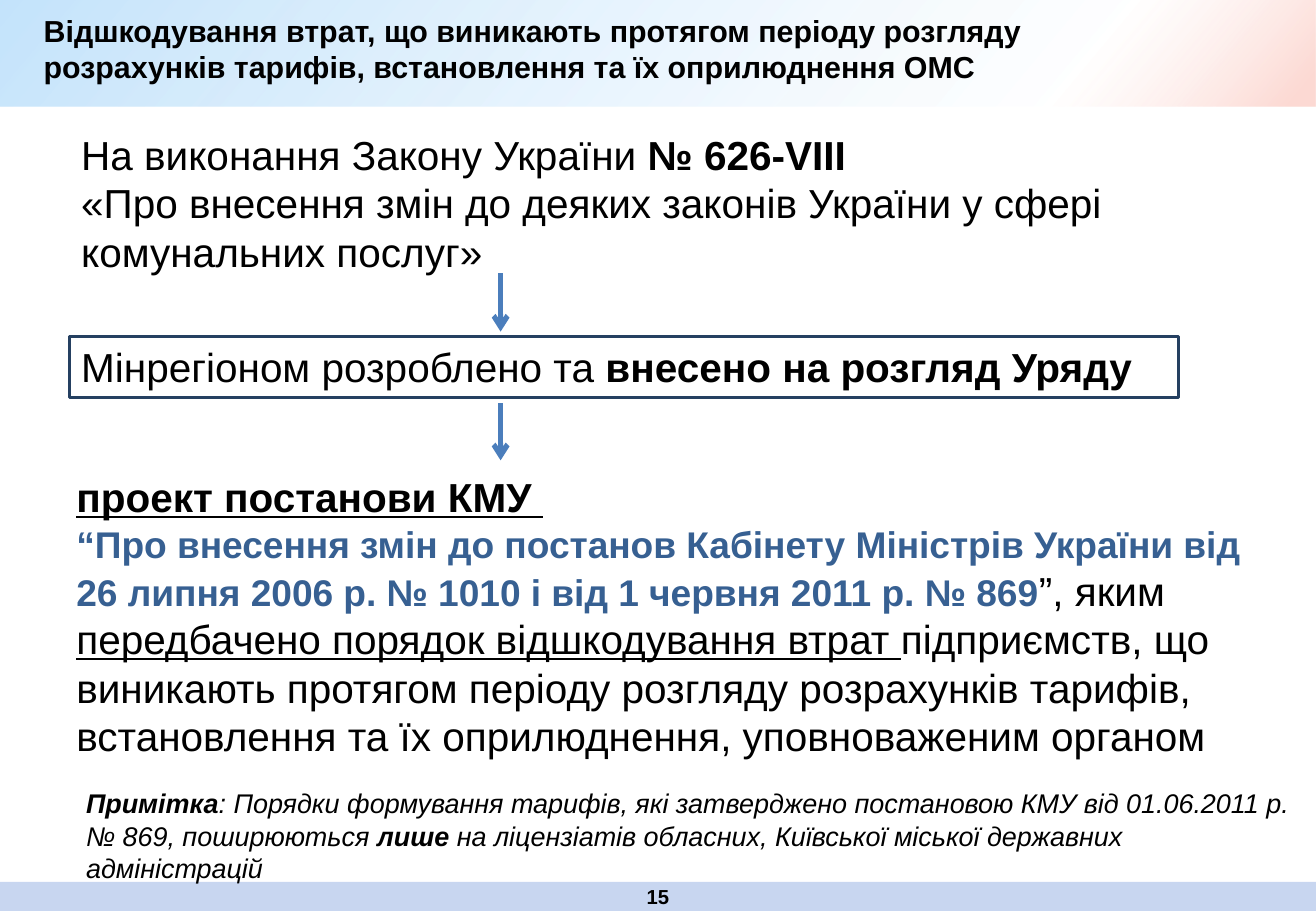
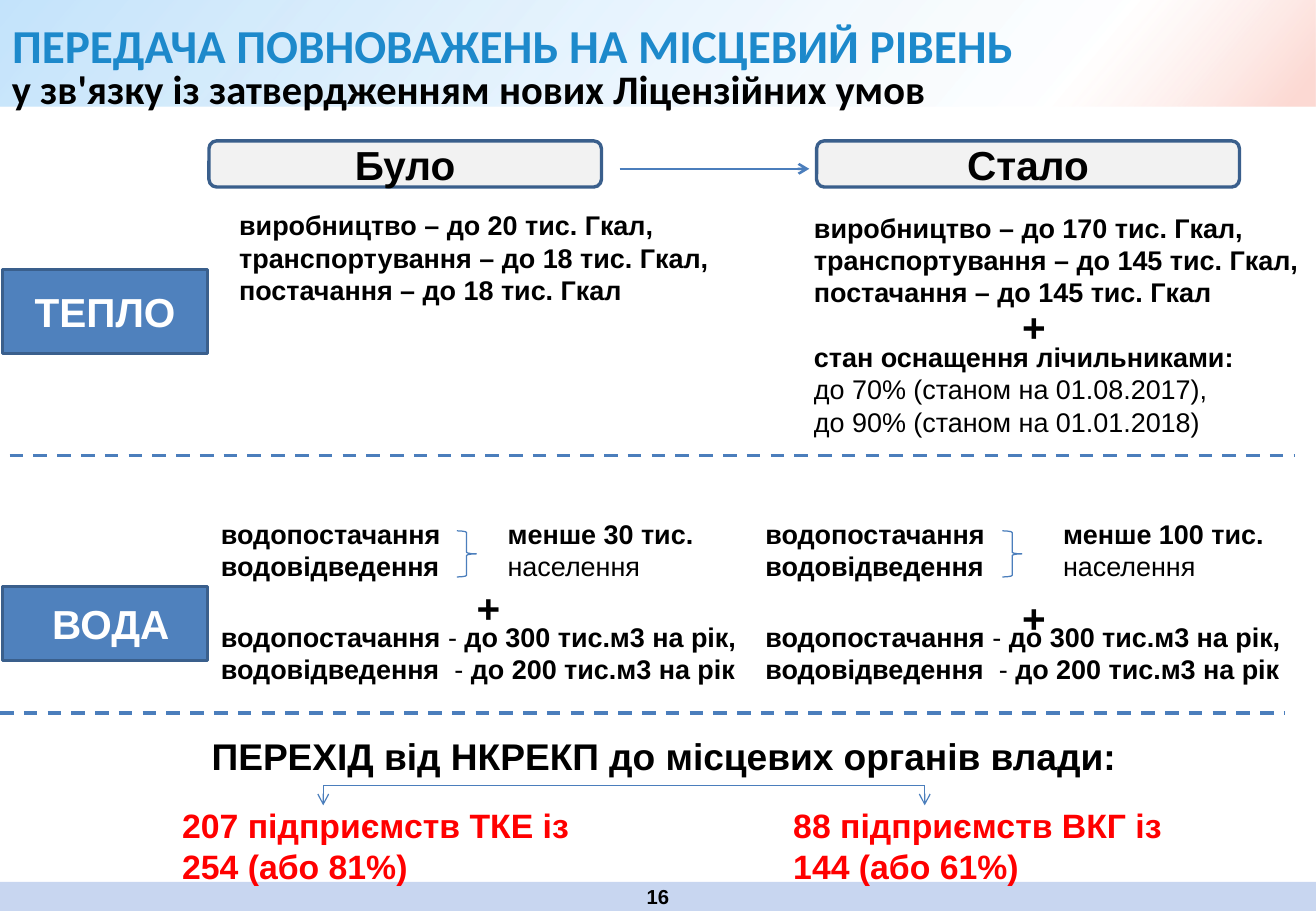
from lxml import etree
from pptx import Presentation
from pptx.dml.color import RGBColor
from pptx.enum.dml import MSO_LINE
from pptx.enum.shapes import MSO_CONNECTOR, MSO_SHAPE
from pptx.enum.text import MSO_ANCHOR, MSO_AUTO_SIZE, PP_ALIGN
from pptx.oxml import parse_xml
from pptx.oxml.ns import qn
from pptx.util import Inches, Pt

RECT, ROUND, BRACE = MSO_SHAPE.RECTANGLE, MSO_SHAPE.ROUNDED_RECTANGLE, MSO_SHAPE.RIGHT_BRACE
LEFT, CENTER, JUSTIFY = PP_ALIGN.LEFT, PP_ALIGN.CENTER, PP_ALIGN.JUSTIFY
TOP, MIDDLE = MSO_ANCHOR.TOP, MSO_ANCHOR.MIDDLE
NO_FIT, DASH, STRAIGHT = MSO_AUTO_SIZE.NONE, MSO_LINE.DASH, MSO_CONNECTOR.STRAIGHT

BLACK, WHITE, RED = "000000", "FFFFFF", "FF0000"
BLUE, EDGE, STROKE = "4F81BD", "3A5F8C", "4B7EBC"
NAVY, QUOTE, TITLE_BLUE = "254061", "376092", "1D89CB"
STRIP, PALE = "C8D6F0", "F2F2F2"
WIDTH, HEIGHT = 10.83, 7.5
color = RGBColor.from_string


def add_box(page, kind, at, fill=None, line=None, weight=1):
    """Add a preset shape; without a fill or line colour it has none."""
    box = page.shapes.add_shape(kind, *map(Inches, at))
    box.shadow.inherit = False
    if fill:
        box.fill.solid()
        box.fill.fore_color.rgb = color(fill)
    else:
        box.fill.background()
    if line:
        box.line.color.rgb = color(line)
        box.line.width = Pt(weight)
    else:
        box.line.fill.background()
    return box


def write(box, paragraphs, size, ink=BLACK, align=LEFT, anchor=TOP, font="Arial"):
    """Fill a box: a paragraph is bold text or a list of (text, style letters)."""
    frame = box.text_frame
    frame.word_wrap = True
    frame.auto_size = NO_FIT
    frame.vertical_anchor = anchor
    for index, spans in enumerate(paragraphs):
        para = frame.add_paragraph() if index else frame.paragraphs[0]
        para.alignment = align
        para.font.name = font
        para.font.size = Pt(size)
        para.font.color.rgb = color(ink)
        if isinstance(spans, str):
            para.font.bold = True
            spans = [(spans, "b")]
        for text, style in spans:
            span = para.add_run()
            span.text = text
            span.font.bold = "b" in style
            if "i" in style:
                span.font.italic = True
            if "u" in style:
                span.font.underline = True
    return frame


deck = Presentation()
deck.slide_width, deck.slide_height = Inches(WIDTH), Inches(HEIGHT)
layout = deck.slide_layouts[5]

# Pages: title and numbered strip
titles = [
    (15, (0.26, 0.05, 9.37, 0.71), 18, BLACK, LEFT, "Arial",
     "Відшкодування втрат, що виникають протягом періоду розгляду "
     "розрахунків тарифів, встановлення та їх оприлюднення ОМС"),
    (16, (0, 0.08, 9.64, 0.57), 28, TITLE_BLUE, JUSTIFY, "Calibri",
     "ПЕРЕДАЧА ПОВНОВАЖЕНЬ НА МІСЦЕВИЙ РІВЕНЬ"),
]
pages = []
for number, at, size, ink, align, font, text in titles:
    page = deck.slides.add_slide(layout)
    title = page.shapes.title
    title.left, title.top, title.width, title.height = map(Inches, at)
    write(title, [text], size, ink, align, font=font)
    strip = add_box(page, RECT, (0, 7.26, WIDTH, 0.24), STRIP)
    write(strip, [str(number)], 12, align=CENTER, anchor=MIDDLE)
    pages.append(page)
losses, powers = pages

# Gradient band, kept on the shared layout behind the titles
band = add_box(losses, RECT, (0, 0, WIDTH, 0.88), WHITE)
stops = "".join(
    f'<a:gs pos="{place * 1000}"><a:srgbClr val="{tint}">'
    f'<a:alpha val="{alpha * 1000}"/></a:srgbClr></a:gs>'
    for place, tint, alpha in [(0, "B4DCFA", 79), (81, WHITE, 62), (98, "FCD9D3", 100)])
gradient = parse_xml(
    '<a:gradFill xmlns:a="http://schemas.openxmlformats.org/drawingml/2006/main" '
    f'rotWithShape="1"><a:gsLst>{stops}</a:gsLst><a:lin ang="2400000" scaled="0"/></a:gradFill>')
solid = band.element.spPr.find(qn("a:solidFill"))
solid.getparent().replace(solid, gradient)
layout.shapes.element.insert(2, band.element)

# Slide 15: from the law to the draft resolution
law = losses.shapes.add_textbox(*map(Inches, (0.57, 1.02, 9.84, 1.31)))
write(law, [
    [("На виконання Закону України ", ""), ("№ 626-VIII", "b")],
    [("«Про внесення змін до деяких законів України у сфері комунальних послуг»", "")],
], 24)
ministry = add_box(losses, RECT, (0.57, 2.77, 9.13, 0.5), line=NAVY, weight=1.75)
write(ministry, [
    [("Мінрегіоном розроблено та ", ""), ("внесено на розгляд Уряду", "b")],
], 24)
draft = losses.shapes.add_textbox(*map(Inches, (0.53, 3.84, 9.88, 2.89)))
frame = write(draft, [
    [("проект постанови КМУ ", "bu")],
    [("“Про внесення змін до постанов Кабінету Міністрів України від "
      "26 липня 2006 р. № 1010 і від 1 червня 2011 р. № 869", "b"),
     ("”, яким ", ""),
     ("передбачено порядок відшкодування втрат ", "u"),
     ("підприємств, що виникають протягом періоду розгляду розрахунків тарифів, "
      "встановлення та їх оприлюднення, уповноваженим органом", "")],
], 24)
quote = frame.paragraphs[1].runs[0]
quote.font.size = Pt(22)
quote.font.color.rgb = color(QUOTE)
note = losses.shapes.add_textbox(*map(Inches, (0.61, 6.43, 10.22, 0.91)))
write(note, [
    [("Примітка", "bi"),
     (": Порядки формування тарифів, які затверджено постановою КМУ від 01.06.2011 р. "
      "№ 869, поширюються ", "i"),
     ("лише", "bi"),
     (" на ліцензіатів обласних, Київської міської державних адміністрацій", "i")],
], 16)

# Slide 16: subtitle, row labels and column heads
subtitle = powers.shapes.add_textbox(*map(Inches, (0, 0.48, 8.57, 0.5)))
write(subtitle, ["у зв'язку із затвердженням нових Ліцензійних умов"], 24, font="Calibri")
for kind, at, fill, ink, text in [
    (RECT, (0.02, 2.22, 1.69, 0.69), BLUE, WHITE, "ТЕПЛО"),
    (RECT, (0.02, 4.83, 1.69, 0.61), BLUE, WHITE, " ВОДА"),
    (ROUND, (1.72, 1.16, 3.23, 0.38), PALE, BLACK, "Було"),
    (ROUND, (6.72, 1.16, 3.48, 0.38), PALE, BLACK, "Стало"),
]:
    write(add_box(powers, kind, at, fill, EDGE, 2), [text], 24, ink, CENTER, MIDDLE)

# Heat limits
heat_before = powers.shapes.add_textbox(*map(Inches, (1.87, 1.67, 4.41, 0.91)))
write(heat_before, [
    "виробництво – до 20 тис. Гкал, транспортування – до 18 тис. Гкал,",
    "постачання – до 18 тис. Гкал",
], 16)
heat_after = powers.shapes.add_textbox(*map(Inches, (6.6, 1.69, 4.41, 1.99)))
frame = write(heat_after, [
    "виробництво – до 170 тис. Гкал, транспортування – до 145 тис. Гкал,",
    "постачання – до 145 тис. Гкал",
    "стан оснащення лічильниками:",
    [("до 70% (станом на 01.08.2017),", "")],
    [("до 90% (станом на 01.01.2018)", "")],
], 16)
frame.paragraphs[2].space_before = Pt(19)

# Water limits, before and after
for left, brace_left, people_left, people in [
    (1.72, 3.76, 4.08, "менше 30 тис. "),
    (6.2, 8.25, 8.65, "менше 100 тис. "),
]:
    services = powers.shapes.add_textbox(*map(Inches, (left, 4.21, 2.28, 0.64)))
    write(services, ["водопостачання", "водовідведення"], 16)
    add_box(powers, BRACE, (brace_left, 4.37, 0.16, 0.38), line=STROKE, weight=0.75)
    population = powers.shapes.add_textbox(*map(Inches, (people_left, 4.21, 1.97, 0.64)))
    write(population, [[(people, "b"), ("населення", "")]], 16)
    volumes = powers.shapes.add_textbox(*map(Inches, (left, 5.06, 4.72, 0.64)))
    write(volumes, [
        [("водопостачання", "b"), (" - ", ""), ("до 300 тис.м3 на рік,", "b")],
        [("водовідведення ", "b"), (" - ", ""), ("до 200 тис.м3 на рік", "b")],
    ], 16)

for left, top in [(8.31, 2.44), (3.82, 4.75), (8.31, 4.83)]:
    plus = powers.shapes.add_textbox(*map(Inches, (left, top, 0.4, 0.5)))
    write(plus, ["+"], 24, align=CENTER)

# Totals
for at, size, ink, align, text in [
    ((0.05, 5.99, WIDTH, 0.47), 22, BLACK, CENTER, "ПЕРЕХІД від НКРЕКП до місцевих органів влади:"),
    ((1.4, 6.58, 3.78, 0.77), 20, RED, LEFT, "207 підприємств ТКЕ із 254 (або 81%)"),
    ((6.43, 6.58, 3.44, 0.77), 20, RED, LEFT, "88 підприємств ВКГ із 144 (або 61%)"),
]:
    write(powers.shapes.add_textbox(*map(Inches, at)), [text], size, ink, align)

# Arrows, dividers and the fork under the totals heading
for page, ends, weight, dashed, arrow in [
    (losses, (4.12, 2.25, 4.12, 2.73), 3, False, True),
    (losses, (4.12, 3.32, 4.12, 3.79), 3, False, True),
    (powers, (5.1, 1.39, 6.66, 1.39), 1.5, False, True),
    (powers, (0.08, 3.75, 10.65, 3.75), 2, True, False),
    (powers, (0, 5.87, 10.57, 5.87), 2, True, False),
    (powers, (2.66, 6.47, 7.61, 6.47), 0.75, False, False),
    (powers, (2.66, 6.47, 2.66, 6.63), 0.75, False, True),
    (powers, (7.61, 6.47, 7.61, 6.63), 0.75, False, True),
]:
    connector = page.shapes.add_connector(STRAIGHT, *map(Inches, ends))
    connector.line.color.rgb = color(STROKE)
    connector.line.width = Pt(weight)
    if dashed:
        connector.line.dash_style = DASH
    properties = connector.element.spPr
    if arrow:
        etree.SubElement(properties.find(qn("a:ln")), qn("a:tailEnd"), type="arrow")
    etree.SubElement(properties, qn("a:effectLst"))

deck.save("out.pptx")
